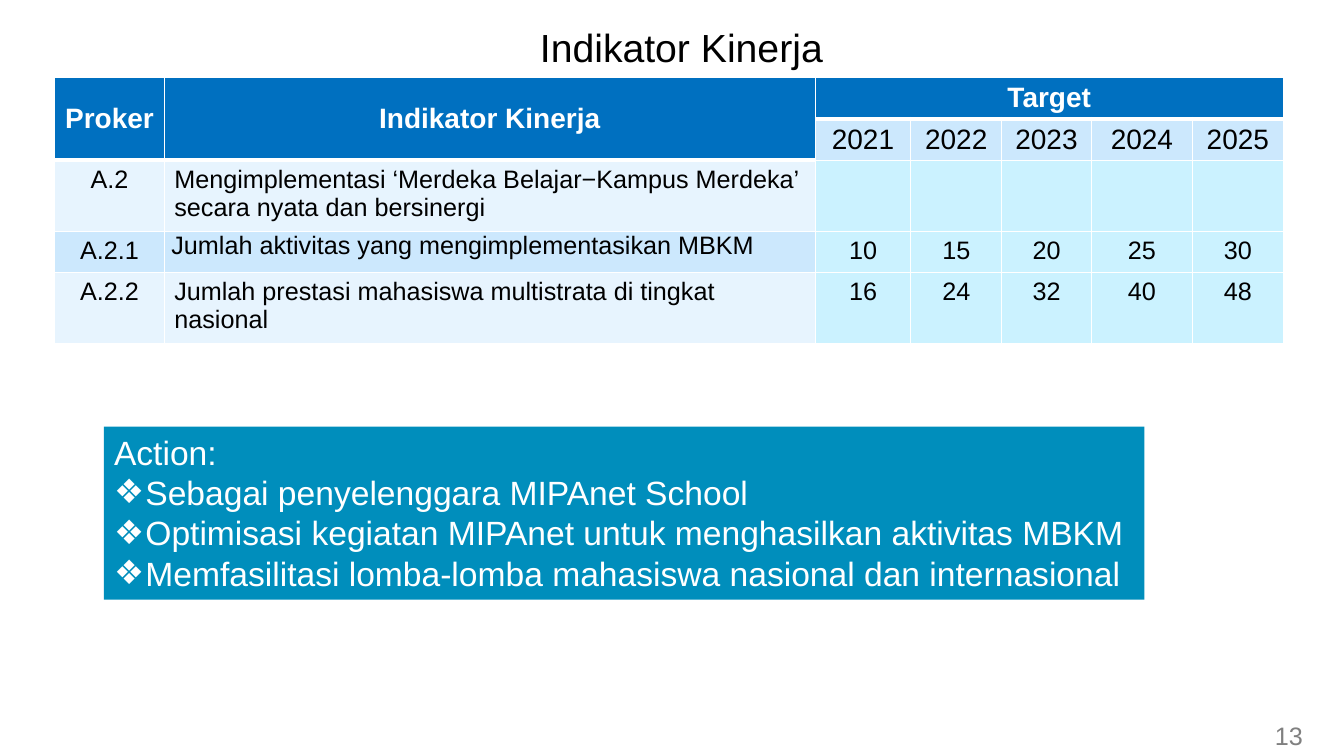
from dataclasses import dataclass

from lxml.etree import SubElement
from pptx import Presentation
from pptx.dml.color import RGBColor
from pptx.enum.text import MSO_ANCHOR, MSO_AUTO_SIZE, PP_ALIGN
from pptx.oxml.ns import qn
from pptx.shapes.base import BaseShape
from pptx.table import Table, _Cell
from pptx.text.text import _Paragraph
from pptx.util import Cm, Pt

FONT = "Arial"
BLACK, WHITE, GREY = "000000", "FFFFFF", "808080"
HEADER_BLUE, ACTION_BLUE = "0070C0", "008EBC"
BAND_DARK, BAND_LIGHT, TARGET_FILL = "CCE8FD", "E7F4FE", "CBF2FF"

COLUMN_WIDTHS = [2.76, 16.41, 2.4, 2.3, 2.25, 2.56, 2.28]
ROW_HEIGHTS = [1.05, 1.05, 1.79, 1.03, 1.79]
FIRST_TARGET = 2
YEARS = ["2021", "2022", "2023", "2024", "2025"]


@dataclass(frozen=True)
class Indicator:
    code: str
    description: str
    targets: list[str]
    fill: str


INDICATORS = [
    Indicator("A.2", "Mengimplementasi ‘Merdeka Belajar−Kampus Merdeka’ secara nyata dan bersinergi",
              [""] * len(YEARS), BAND_LIGHT),
    Indicator("A.2.1", "Jumlah aktivitas yang mengimplementasikan MBKM",
              ["10", "15", "20", "25", "30"], BAND_DARK),
    Indicator("A.2.2", "Jumlah prestasi mahasiswa multistrata di tingkat nasional",
              ["16", "24", "32", "40", "48"], BAND_LIGHT),
]
ACTIONS = [
    "Sebagai penyelenggara MIPAnet School",
    "Optimisasi kegiatan MIPAnet untuk menghasilkan aktivitas MBKM",
    "Memfasilitasi lomba-lomba mahasiswa nasional dan internasional",
]


def color(value: str) -> RGBColor:
    return RGBColor.from_string(value)


def place(shape: BaseShape, left: float, top: float, width: float, height: float) -> None:
    shape.left, shape.top = Cm(left), Cm(top)
    shape.width, shape.height = Cm(width), Cm(height)


def format_paragraph(paragraph: _Paragraph, size: int, text_color: str,
                     alignment: PP_ALIGN = PP_ALIGN.LEFT, bold: bool = False) -> None:
    paragraph.alignment = alignment
    paragraph.font.name = FONT
    paragraph.font.size = Pt(size)
    paragraph.font.bold = bold
    paragraph.font.color.rgb = color(text_color)


def set_bullet(paragraph: _Paragraph, character: str = "", indent: float = 0) -> None:
    properties = paragraph._p.get_or_add_pPr()
    properties.set("marL", str(Cm(indent)))
    properties.set("indent", str(-Cm(indent)))
    if character:
        SubElement(properties, qn("a:buFont"), typeface=FONT)
        SubElement(properties, qn("a:buChar"), char=character)
    else:
        SubElement(properties, qn("a:buNone"))


def set_borders(cell: _Cell, top: int, bottom: int) -> None:
    properties = cell._tc.get_or_add_tcPr()
    for side, width in {"L": 1, "R": 1, "T": top, "B": bottom}.items():
        line = SubElement(properties, qn(f"a:ln{side}"), w=str(Pt(width)))
        fill = SubElement(line, qn("a:solidFill"))
        SubElement(fill, qn("a:srgbClr"), val=WHITE)


def border_below(row: int, column: int) -> int:
    is_header = row == 0 or (row == 1 and column < FIRST_TARGET)
    return 3 if is_header else 1


def fill_cell(cell: _Cell, text: str, fill: str, size: int = 18, text_color: str = BLACK,
              alignment: PP_ALIGN = PP_ALIGN.CENTER, bold: bool = False) -> None:
    cell.text = text
    cell.fill.solid()
    cell.fill.fore_color.rgb = color(fill)
    format_paragraph(cell.text_frame.paragraphs[0], size, text_color, alignment, bold)


def fill_table(table: Table) -> None:
    for column, width in zip(table.columns, COLUMN_WIDTHS):
        column.width = Cm(width)
    for row, height in zip(table.rows, ROW_HEIGHTS):
        row.height = Cm(height)
    for row in range(len(ROW_HEIGHTS)):
        for column in range(len(COLUMN_WIDTHS)):
            set_borders(table.cell(row, column), border_below(row - 1, column) if row else 1,
                        border_below(row, column))

    # Header rows
    for column, heading in enumerate(["Proker", "Indikator Kinerja", "Target"]):
        cell = table.cell(0, column)
        fill_cell(cell, heading, HEADER_BLUE, 20, WHITE, bold=True)
        if column < FIRST_TARGET:
            cell.merge(table.cell(1, column))
            cell.vertical_anchor = MSO_ANCHOR.MIDDLE
        else:
            cell.merge(table.cell(0, len(COLUMN_WIDTHS) - 1))
    for column, year in enumerate(YEARS, FIRST_TARGET):
        fill_cell(table.cell(1, column), year, BAND_DARK, 20)

    # Indicator rows
    for row, indicator in enumerate(INDICATORS, 2):
        fill_cell(table.cell(row, 0), indicator.code, indicator.fill)
        fill_cell(table.cell(row, 1), indicator.description, indicator.fill, alignment=PP_ALIGN.LEFT)
        for column, target in enumerate(indicator.targets, FIRST_TARGET):
            fill_cell(table.cell(row, column), target, TARGET_FILL)

    tight_cell = table.cell(3, 1)
    tight_cell.margin_left = tight_cell.margin_right = Cm(0.18)
    tight_cell.margin_top = tight_cell.margin_bottom = 0
    tight_cell.text_frame.paragraphs[0].space_after = Pt(6)


def main() -> None:
    presentation = Presentation()
    presentation.slide_width, presentation.slide_height = Cm(33.87), Cm(19.05)
    slide = presentation.slides.add_slide(presentation.slide_layouts[1])

    # Title
    title = slide.shapes.title
    place(title, 2.21, 0.46, 29.92, 1.45)
    title.text_frame.text = "Indikator Kinerja"
    title.text_frame.auto_size = MSO_AUTO_SIZE.NONE
    title.text_frame.vertical_anchor = MSO_ANCHOR.TOP
    format_paragraph(title.text_frame.paragraphs[0], 28, BLACK, PP_ALIGN.CENTER)

    # Indicator table
    frame = slide.shapes.add_table(len(ROW_HEIGHTS), len(COLUMN_WIDTHS), Cm(1.38), Cm(1.94),
                                   Cm(sum(COLUMN_WIDTHS)), Cm(sum(ROW_HEIGHTS)))
    fill_table(frame.table)

    # Action list
    action_box = slide.placeholders[1]
    place(action_box, 2.62, 10.75, 26.22, 4.36)
    action_box.fill.solid()
    action_box.fill.fore_color.rgb = color(ACTION_BLUE)
    action_box.text_frame.auto_size = MSO_AUTO_SIZE.NONE
    action_box.text_frame.text = "\n".join(["Action:", *ACTIONS])
    for position, paragraph in enumerate(action_box.text_frame.paragraphs):
        paragraph.space_before = Pt(0)
        if position == 0:
            set_bullet(paragraph)
        else:
            set_bullet(paragraph, "❖", 0.79)
        format_paragraph(paragraph, 24, WHITE)

    # Page number
    page_number = slide.shapes.add_textbox(Cm(31.88), Cm(18.03), Cm(1.4), Cm(1.02))
    page_number.text_frame.word_wrap = True
    page_number.text_frame.text = "13"
    format_paragraph(page_number.text_frame.paragraphs[0], 18, GREY)

    presentation.save("out.pptx")


if __name__ == "__main__":
    main()
